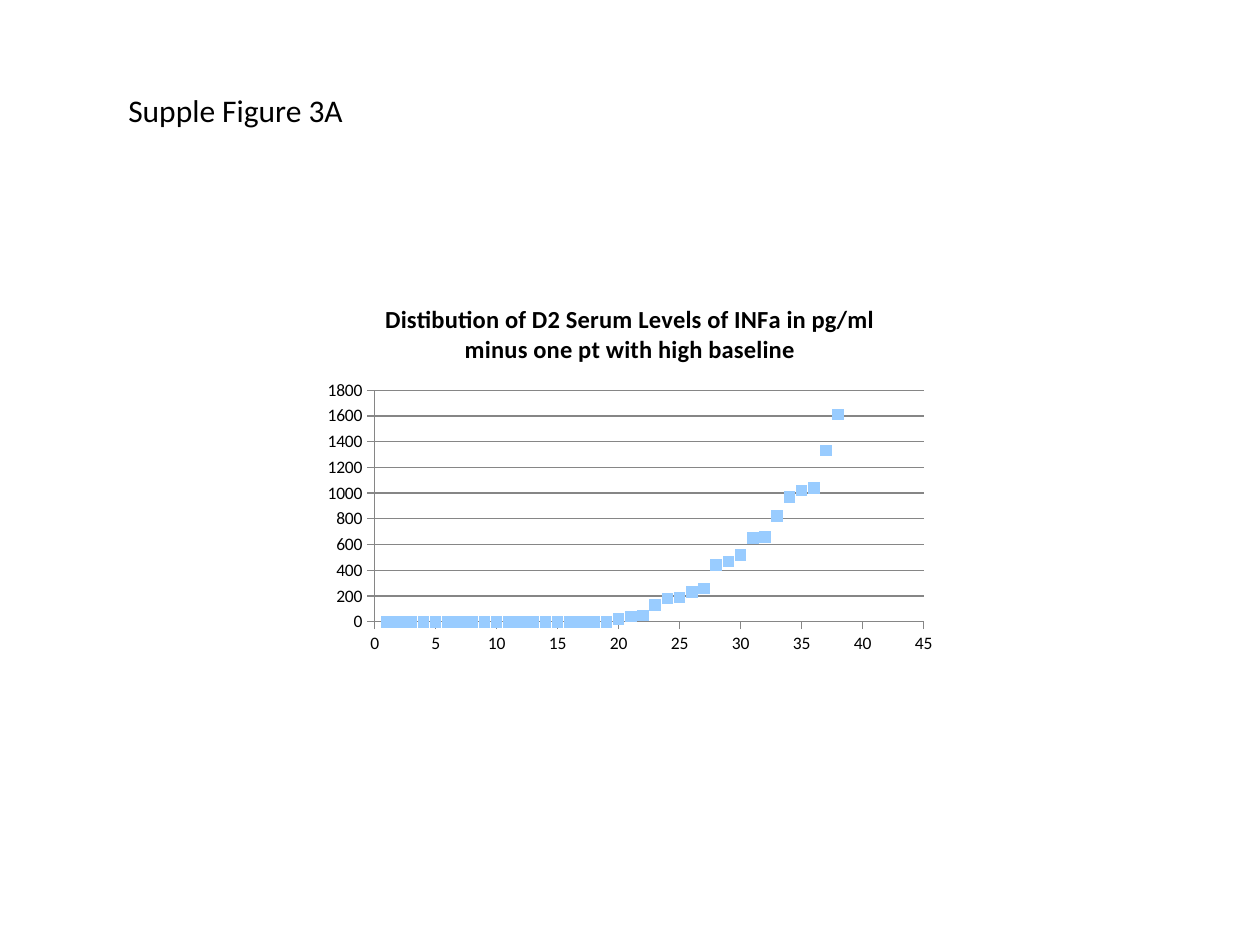
from pptx import Presentation
from pptx.chart.data import XyChartData
from pptx.dml.color import RGBColor
from pptx.enum.chart import XL_CHART_TYPE as ChartType, XL_MARKER_STYLE as Marker, XL_TICK_MARK as Tick
from pptx.enum.text import MSO_AUTO_SIZE as AutoSize
from pptx.util import Pt

FONT = "Calibri"
COLORS = {"text": "000000", "marker": "99CCFF", "axis": "868686"}
LABEL = "Supple Figure 3A"
TITLE = "Distibution of D2 Serum Levels of INFa in pg/ml minus one pt with high baseline"
# Serum levels by patient rank, starting at 1
LEVELS = [0] * 19 + [20, 40, 50, 130, 180, 190, 230, 260, 440, 470, 520,
                     650, 660, 820, 970, 1020, 1040, 1330, 1610]


def color(name):
    return RGBColor.from_string(COLORS[name])


def style_font(font, size, bold=False):
    font.name, font.size, font.bold = FONT, Pt(size), bold
    font.color.rgb = color("text")


def style_line(line):
    line.color.rgb = color("axis")
    line.width = Pt(0.75)


deck = Presentation()
deck.slide_width, deck.slide_height = Pt(720), Pt(540)
page = deck.slides.add_slide(deck.slide_layouts[6])

# Scatter chart
data = XyChartData()
points = data.add_series("Series 1")
for rank, level in enumerate(LEVELS, start=1):
    points.add_data_point(rank, level)
chart = page.shapes.add_chart(ChartType.XY_SCATTER, Pt(180), Pt(162),
                              Pt(360), Pt(216), data).chart
style_font(chart.font, 10)
chart.has_legend = False
chart.has_title = True
chart.chart_title.include_in_layout = False
title = chart.chart_title.text_frame
title.text = TITLE
style_font(title.paragraphs[0].runs[0].font, 14, bold=True)

# Axes
for axis, top, step in ((chart.category_axis, 45, 5), (chart.value_axis, 1800, 200)):
    axis.minimum_scale, axis.maximum_scale, axis.major_unit = 0, top, step
    axis.major_tick_mark, axis.minor_tick_mark = Tick.OUTSIDE, Tick.NONE
    style_line(axis.format.line)
chart.category_axis.has_major_gridlines = False
chart.value_axis.has_major_gridlines = True
style_line(chart.value_axis.major_gridlines.format.line)

# Square markers without a joining line
chart.plots[0].vary_by_categories = False
series = chart.plots[0].series[0]
series.format.line.fill.background()
series.marker.style, series.marker.size = Marker.SQUARE, 6
series.marker.format.fill.solid()
series.marker.format.fill.fore_color.rgb = color("marker")
series.marker.format.line.fill.background()

# Figure label
box = page.shapes.add_textbox(Pt(66.24), Pt(48.24), Pt(138.96), Pt(28.8))
frame = box.text_frame
frame.text = LABEL
frame.word_wrap = False
frame.auto_size = AutoSize.SHAPE_TO_FIT_TEXT
style_font(frame.paragraphs[0].runs[0].font, 18)

deck.save("out.pptx")
